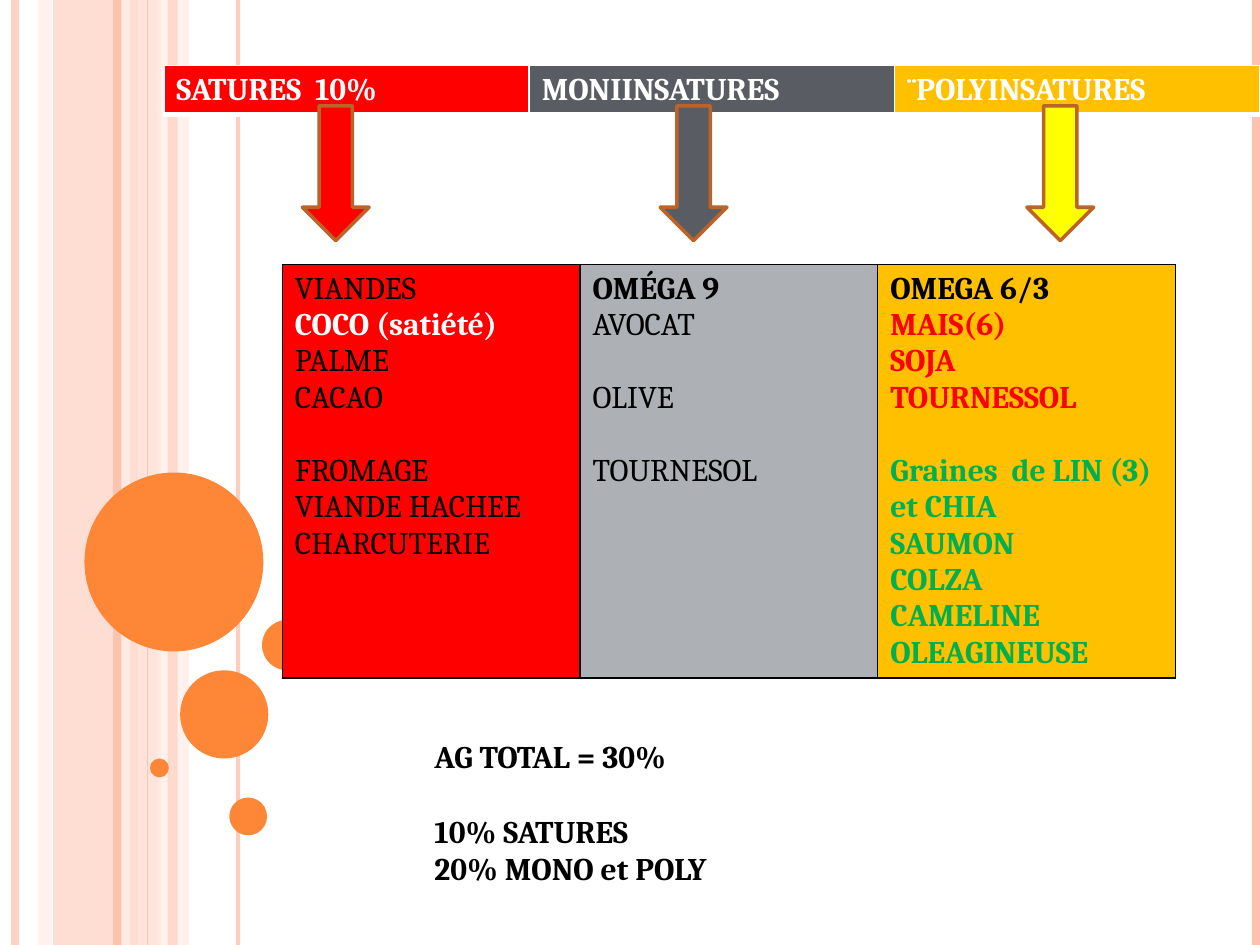
from lxml import etree
from pptx import Presentation, util as u
from pptx.dml.color import RGBColor
from pptx.enum import shapes, text
from pptx.oxml.ns import qn

WIDTH, HEIGHT = 10, 7.5
FONT, SIZE = "Cambria", 18
BLANK_LINE = 21  # points, the height of one line of text
BLACK, WHITE, RED, GREEN = "000000", "FFFFFF", "FF0000", "00B050"
AMBER, SLATE, ORANGE, OUTLINE = "FFC000", "595D63", "FE8637", "BC6329"
PEACH, BLUSH, PALE = "FEC3AE", "FFD9CE", "FFEDE8"

# left, width, colour, opacity in percent
BANDS = [
    (0.42, 0.67, PEACH, 54), (0.3, 0.11, BLUSH, 36), (1.08, 0.2, BLUSH, 70),
    (1.25, 0.25, PALE, 71), (1.33, 0.08, PEACH, 51),
]
# x, line width in points, colour, opacity in percent
STRIPES = [
    (0.12, 4.5, PEACH, 73), (1, 4.5, PALE, 83), (0.93, 4.5, PEACH, 100),
    (1.89, 2.25, PEACH, 82), (1.17, 0.75, PEACH, 100), (9.97, 4.5, PEACH, 100),
]
# left, top, diameter
BUBBLES = [
    (0.67, 3.75, 1.42), (1.43, 5.32, 0.7), (1.19, 6.02, 0.15),
    (1.82, 6.33, 0.3), (2.08, 4.92, 0.4),
]

# Each paragraph: text, then the format that differs from plain black
HEADINGS = [
    (RED, [("SATURES  10%", dict(color=WHITE, bold=True))]),
    (SLATE, [("MONIINSATURES", dict(color=WHITE, bold=True))]),
    (AMBER, [("¨POLYINSATURES", dict(color=WHITE, bold=True))]),
]
OMEGA_6 = dict(color=RED, bold=True)
OMEGA_3 = dict(color=GREEN, bold=True)
FOODS = [
    (RED, [
        ("VIANDES", {}), ("COCO (satiété)", dict(color=WHITE, bold=True)),
        ("PALME", {}), ("CACAO", {}), ("FROMAGE", dict(before=BLANK_LINE)),
        ("VIANDE HACHEE", {}), ("CHARCUTERIE", {}),
    ]),
    ("ADB0B5", [
        ("OMÉGA 9", dict(bold=True)), ("AVOCAT", {}),
        ("OLIVE", dict(before=BLANK_LINE)),
        ("TOURNESOL", dict(before=BLANK_LINE)),
    ]),
    (AMBER, [
        ("OMEGA 6/3", dict(bold=True)), ("MAIS(6)", OMEGA_6),
        ("SOJA", OMEGA_6), ("TOURNESSOL", OMEGA_6),
        ("Graines  de LIN (3) et CHIA", dict(OMEGA_3, before=BLANK_LINE)),
        ("SAUMON", OMEGA_3), ("COLZA", OMEGA_3),
        ("CAMELINE", OMEGA_3), ("OLEAGINEUSE", OMEGA_3),
    ]),
]
TOTALS = [
    ("AG TOTAL = 30%", dict(bold=True)),
    ("10% SATURES", dict(bold=True, before=BLANK_LINE)),
    ("20% MONO et POLY", dict(bold=True)),
]
ARROWS = [(2.4, RED), (5.24, SLATE), (8.15, "FFFF00")]  # left, colour


def rgb(color):
    return RGBColor.from_string(color)


def set_opacity(shape, percent):
    if percent < 100:
        color = shape.element.spPr.find(".//" + qn("a:srgbClr"))
        etree.SubElement(color, qn("a:alpha"), val=str(percent * 1000))


def add_shape(slide, kind, box, fill, outline=None, opacity=100):
    shape = slide.shapes.add_shape(kind, *map(u.Inches, box))
    shape.shadow.inherit = False
    shape.fill.solid()
    shape.fill.fore_color.rgb = rgb(fill)
    set_opacity(shape, opacity)
    if outline:
        shape.line.color.rgb = rgb(outline)
        shape.line.width = u.Pt(2)
    else:
        shape.line.fill.background()


def add_stripe(slide, x, width, color, opacity):
    line = slide.shapes.add_connector(
        shapes.MSO_CONNECTOR.STRAIGHT, u.Inches(x), 0, u.Inches(x), u.Inches(HEIGHT))
    line.line.color.rgb = rgb(color)
    line.line.width = u.Pt(width)
    set_opacity(line, opacity)
    etree.SubElement(line.element.spPr, qn("a:effectLst"))


def write(paragraph, words, color=BLACK, bold=False, before=0):
    paragraph.space_before = u.Pt(before)
    run = paragraph.add_run()
    run.text = words
    run.font.name, run.font.size, run.font.bold = FONT, u.Pt(SIZE), bold
    run.font.color.rgb = rgb(color)


def write_all(frame, paragraphs):
    for index, (words, style) in enumerate(paragraphs):
        write(frame.add_paragraph() if index else frame.paragraphs[0], words, **style)


def set_borders(cell, color, bottom):
    """Draw 1 point borders, with the bottom one as wide as given."""
    properties = cell._tc.get_or_add_tcPr()
    for side, width in (("L", 1), ("R", 1), ("T", 1), ("B", bottom)):
        line = etree.SubElement(properties, qn("a:ln" + side), w=str(u.Pt(width)))
        fill = etree.SubElement(line, qn("a:solidFill"))
        etree.SubElement(fill, qn("a:srgbClr"), val=color)


def add_row_table(slide, box, columns, border, bottom=1):
    table = slide.shapes.add_table(1, len(columns), *map(u.Inches, box)).table
    table.first_row = table.horz_banding = False
    for cell, (fill, paragraphs) in zip(table.rows[0].cells, columns):
        set_borders(cell, border, bottom)
        cell.fill.solid()
        cell.fill.fore_color.rgb = rgb(fill)
        write_all(cell.text_frame, paragraphs)


def main():
    presentation = Presentation()
    presentation.slide_width, presentation.slide_height = u.Inches(WIDTH), u.Inches(HEIGHT)
    slide = presentation.slides.add_slide(presentation.slide_layouts[6])

    for left, width, color, opacity in BANDS:
        add_shape(slide, shapes.MSO_SHAPE.RECTANGLE, (left, 0, width, HEIGHT),
                  color, opacity=opacity)
    for stripe in STRIPES:
        add_stripe(slide, *stripe)
    for left, top, diameter in BUBBLES:
        add_shape(slide, shapes.MSO_SHAPE.OVAL, (left, top, diameter, diameter), ORANGE)

    add_row_table(slide, (1.3, 0.52, 8.7, 0.37), HEADINGS, WHITE, bottom=3)
    add_row_table(slide, (2.24, 2.1, 7.09, 3.28), FOODS, BLACK)
    for left, color in ARROWS:
        add_shape(slide, shapes.MSO_SHAPE.DOWN_ARROW, (left, 0.84, 0.53, 1.07),
                  color, outline=OUTLINE)

    totals = slide.shapes.add_textbox(*map(u.Inches, (3.35, 5.8, 5.04, 1.31)))
    totals.text_frame.word_wrap = True
    totals.text_frame.auto_size = text.MSO_AUTO_SIZE.SHAPE_TO_FIT_TEXT
    write_all(totals.text_frame, TOTALS)

    presentation.save("out.pptx")


if __name__ == "__main__":
    main()
